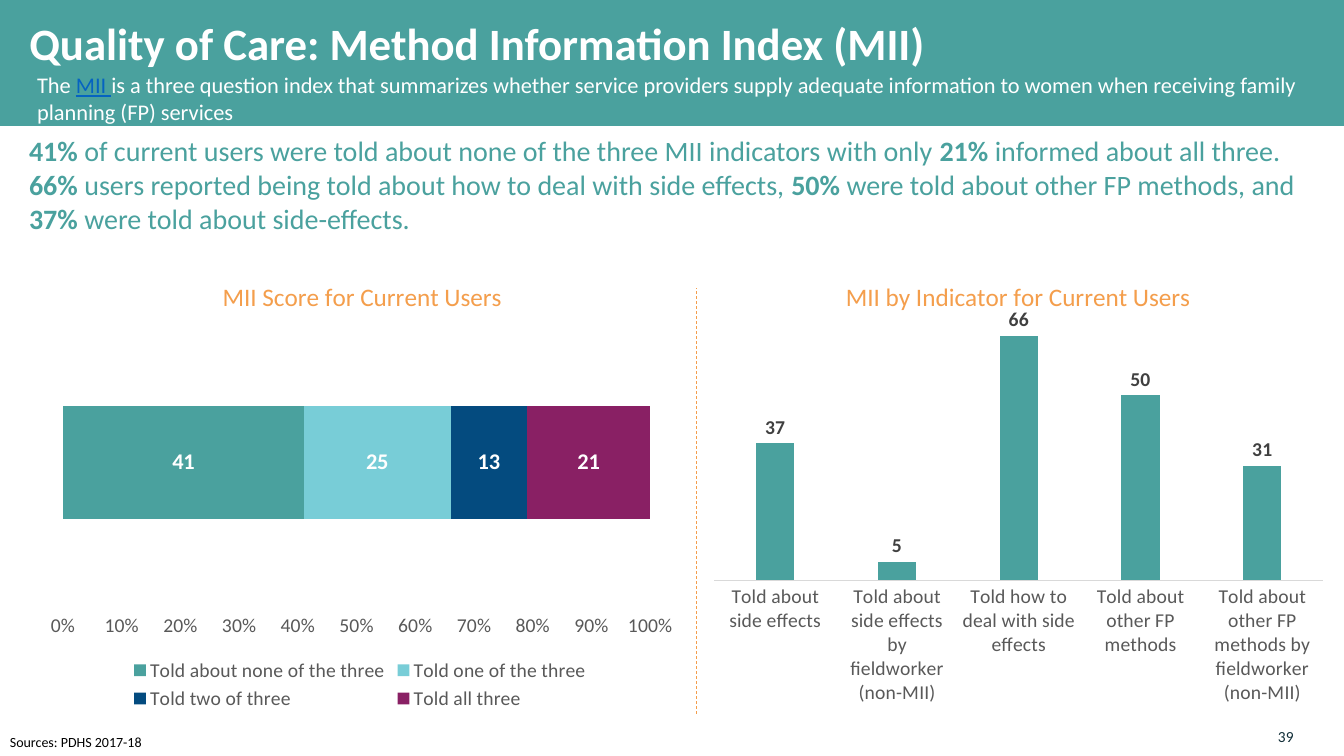
from lxml import etree
from pptx import Presentation, util as u
from pptx.chart.data import CategoryChartData
from pptx.dml.color import RGBColor
from pptx.enum import chart as ch, dml, shapes, text
from pptx.oxml import parse_xml
from pptx.oxml.ns import nsdecls, qn

FONT = "Calibri"
TEAL, ORANGE, WHITE, GREY = "4AA19E", "F49E4C", "FFFFFF", "595959"


def rgb(value):
    """Return a colour from a hex string."""
    return RGBColor.from_string(value)


def style(font, size, color, bold=False):
    """Set the typeface, size, colour and weight of a font."""
    font.name, font.size, font.bold = FONT, u.Pt(size), bold
    font.color.rgb = rgb(color)


def place(sp, left, top, width, height):
    """Move and size a shape in inches."""
    sp.left, sp.top = u.Inches(left), u.Inches(top)
    sp.width, sp.height = u.Inches(width), u.Inches(height)


def add_text(s, box, runs, size, color):
    """Add a wrapped text box and return its frame and runs."""
    tf = s.shapes.add_textbox(*map(u.Inches, box)).text_frame
    tf.word_wrap = True
    p = tf.paragraphs[0]
    style(p.font, size, color)
    for words in runs:
        p.add_run().text = words
    return tf, p.runs


def add_band(s):
    """Add the header band behind the other shapes."""
    sp = s.shapes.add_shape(shapes.MSO_SHAPE.RECTANGLE, 0, 0, u.Inches(13.33), u.Inches(1.25))
    sp.shadow.inherit = False
    sp.fill.solid()
    sp.fill.fore_color.rgb = rgb(TEAL)
    sp.line.fill.background()
    s.shapes._spTree.insert(2, sp._element)


def add_title(s, words):
    """Fill and format the title placeholder."""
    sp = s.shapes.title
    place(sp, 0.19, 0.16, 12.33, 0.59)
    tf = sp.text_frame
    tf.text = words
    tf.vertical_anchor = text.MSO_ANCHOR.MIDDLE
    p = tf.paragraphs[0]
    p.alignment, p.line_spacing = text.PP_ALIGN.LEFT, 0.9
    style(p.font, 32, WHITE, True)


def manual_layout(parent, target, **fractions):
    """Give a chart part a manual layout in fractions of the chart."""
    for old in parent.findall(qn("c:layout")):
        parent.remove(old)
    layout = parse_xml(f"<c:layout {nsdecls('c')}><c:manualLayout/></c:layout>")
    values = {"layoutTarget": target} if target else {}
    values.update(xMode="edge", yMode="edge", **fractions)
    for name, value in values.items():
        etree.SubElement(layout[0], qn(f"c:{name}")).set("val", str(value))
    parent.insert(1 if parent.find(qn("c:tx")) is not None else 0, layout)


def add_chart(s, kind, box, title, title_x, plot, cats, series, label_size, label_color, label_pos):
    """Add a bar chart with coloured series and value labels."""
    data = CategoryChartData(number_format="0")
    data.categories = cats
    for name, values, _ in series:
        data.add_series(name, values)
    chart = s.shapes.add_chart(kind, *map(u.Inches, box), data).chart
    style(chart.font, 14, GREY)
    chart.has_legend = False
    p = chart.chart_title.text_frame.paragraphs[0]
    p.text = title
    style(p.font, 18, ORANGE)
    chart.chart_title.include_in_layout = False
    manual_layout(chart.chart_title._element, None, x=title_x, y=0.05)
    manual_layout(chart._chartSpace.chart.plotArea, "inner", **plot)
    chart.value_axis.has_major_gridlines = False
    chart.plots[0].vary_by_categories = False
    for ser, (_, _, color) in zip(chart.plots[0].series, series):
        ser.format.fill.solid()
        ser.format.fill.fore_color.rgb = rgb(color)
        ser.invert_if_negative = False
        labels = ser.data_labels
        labels.show_value, labels.position = True, label_pos
        labels.number_format, labels.number_format_is_linked = "0", False
        style(labels.font, label_size, label_color, True)
    return chart


def add_score_chart(s):
    """Add the stacked bar of MII scores."""
    series = [("Told about none of the three", [41], TEAL),
              ("Told one of the three", [25], "78CDD7"),
              ("Told two of three", [13], "044B7F"),
              ("Told all three", [21], "892064")]
    chart = add_chart(s, ch.XL_CHART_TYPE.BAR_STACKED_100, (0.37, 2.5, 6.4, 4.59),
                      "MII Score for Current Users", 0.28, dict(x=0.04, y=0.15, w=0.91, h=0.61),
                      ["1"], series, 16, WHITE, ch.XL_LABEL_POSITION.CENTER)
    chart.plots[0].gap_width, chart.plots[0].overlap = 150, 100
    chart.category_axis.visible = False
    axis = chart.value_axis
    axis.format.line.fill.background()
    axis.tick_labels.number_format = "0%"
    axis.tick_labels.number_format_is_linked = False
    style(axis.tick_labels.font, 14, GREY)
    chart.has_legend = True
    chart.legend.position = ch.XL_LEGEND_POSITION.BOTTOM
    chart.legend.include_in_layout = False
    style(chart.legend.font, 14, GREY)


def add_indicator_chart(s):
    """Add the columns of MII indicators."""
    cats = ["Told about side effects", "Told about side effects by fieldworker (non-MII)",
            "Told how to deal with side effects", "Told about other FP methods",
            "Told about other FP methods by fieldworker (non-MII)"]
    chart = add_chart(s, ch.XL_CHART_TYPE.COLUMN_CLUSTERED, (6.96, 2.5, 6.29, 4.59),
                      "MII by Indicator for Current Users", 0.22, dict(x=0.02, y=0.15, w=0.96, h=0.56),
                      cats, [("Series 1", [37, 5, 66, 50, 31], TEAL)], 14, "404040",
                      ch.XL_LABEL_POSITION.OUTSIDE_END)
    chart.plots[0].gap_width, chart.plots[0].overlap = 219, -27
    chart.value_axis.visible = False
    chart.value_axis.minimum_scale, chart.value_axis.maximum_scale = 0, 70
    axis = chart.category_axis
    axis.major_tick_mark = ch.XL_TICK_MARK.NONE
    axis.format.line.color.rgb = rgb("D9D9D9")
    axis.format.line.width = u.Pt(0.75)
    style(axis.tick_labels.font, 14, GREY)


def add_divider(s):
    """Add the dashed line between the charts."""
    ends = map(u.Inches, (6.91, 7.08, 6.91, 2.86))
    sp = s.shapes.add_connector(shapes.MSO_CONNECTOR.STRAIGHT, *ends)
    sp.line.color.rgb = rgb(ORANGE)
    sp.line.width, sp.line.dash_style = u.Pt(0.5), dml.MSO_LINE.DASH
    etree.SubElement(sp._element.spPr, qn("a:effectLst"))


def main():
    """Build and save the slide."""
    prs = Presentation()
    prs.slide_width, prs.slide_height = u.Inches(13.33), u.Inches(7.5)
    s = prs.slides.add_slide(prs.slide_layouts[5])
    add_band(s)
    add_title(s, "Quality of Care: Method Information Index (MII)")
    _, runs = add_text(s, (0.27, 0.66, 13.06, 0.64), [
        "The ", "MII ", "is a three question index that summarizes whether service providers supply "
        "adequate information to women when receiving family planning (FP) services"], 16, WHITE)
    runs[1].font.color.rgb, runs[1].font.underline = rgb("0563C1"), True
    _, runs = add_text(s, (0.19, 1.28, 13.06, 1.11), [
        "41%", " of current users were told about none of the three MII indicators with only ",
        "21% ", "informed about all three. ",
        "66% ", "users reported being told about how to deal with side effects, ",
        "50% ", "were told about other FP methods, and ",
        "37%", " were told about side-effects."], 20, TEAL)
    for r in runs[::2]:
        r.font.bold = True
    add_indicator_chart(s)
    add_score_chart(s)
    add_divider(s)
    add_text(s, (0, 7.23, 9.5, 0.27), ["Sources: PDHS 2017-18"], 10, "000000")
    tf, _ = add_text(s, (12.34, 7.21, 0.49, 0.2), ["39"], 11, "112E38")
    tf.margin_left = tf.margin_top = tf.margin_right = tf.margin_bottom = 0
    tf.paragraphs[0].alignment = text.PP_ALIGN.RIGHT
    prs.save("out.pptx")


if __name__ == "__main__":
    main()
